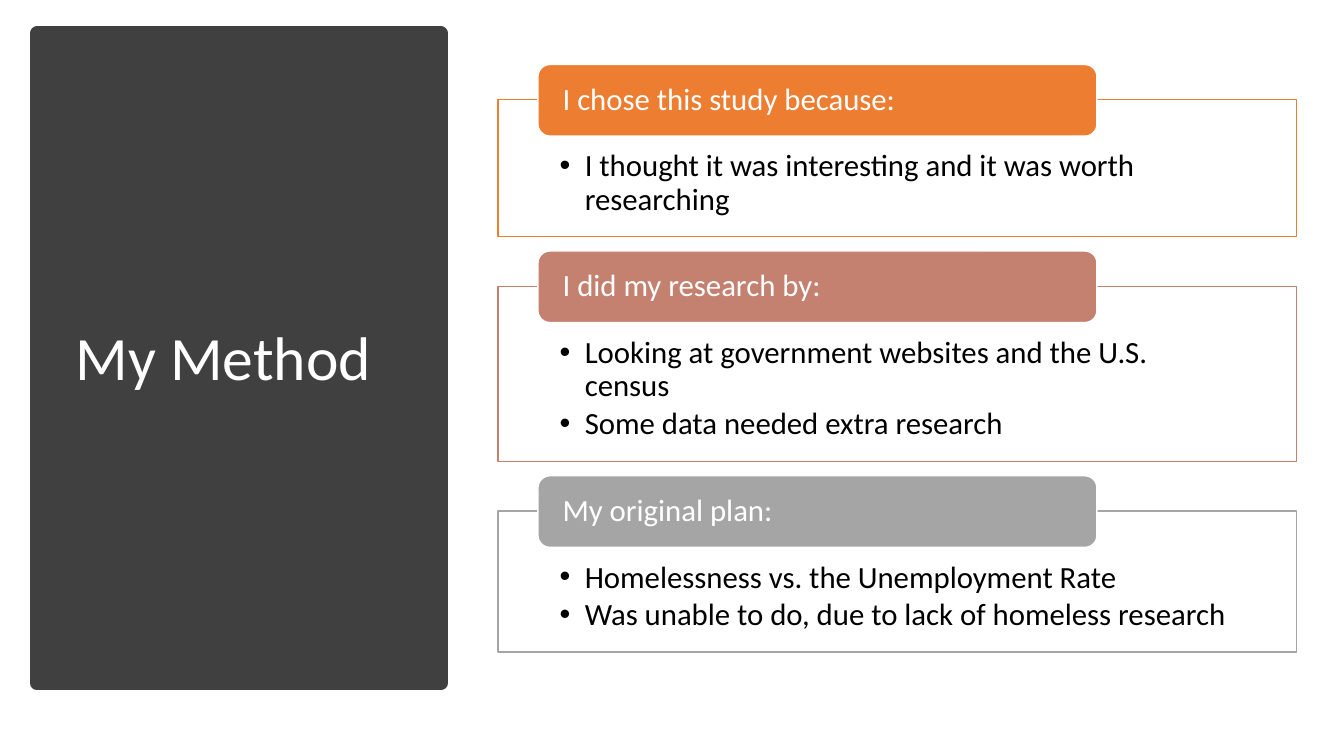
from dataclasses import dataclass

from lxml import etree
from pptx import Presentation
from pptx.dml.color import RGBColor
from pptx.enum.shapes import MSO_SHAPE
from pptx.enum.text import MSO_ANCHOR, MSO_AUTO_SIZE, PP_ALIGN
from pptx.oxml.ns import qn
from pptx.util import Inches, Pt

RECTANGLE = MSO_SHAPE.RECTANGLE
ROUNDED = MSO_SHAPE.ROUNDED_RECTANGLE
TOP, MIDDLE = MSO_ANCHOR.TOP, MSO_ANCHOR.MIDDLE
LEFT = PP_ALIGN.LEFT
NO_AUTOFIT = MSO_AUTO_SIZE.NONE


@dataclass(frozen=True)
class Theme:
    font: str = "Calibri"
    title_size: int = 44
    text_size: int = 22
    white: str = "FFFFFF"
    black: str = "000000"
    panel: str = "404040"
    orange: str = "ED7D31"
    rose: str = "C48170"
    gray: str = "A5A5A5"


THEME = Theme()

TITLE_ONLY = 5
SECTION_GAP = 0.14
HEADING_HEIGHT = 0.71
HEADING_OVERLAP = 0.36
SECTIONS = [
    ("I chose this study because:", THEME.orange, 1.36,
     ["I thought it was interesting and it was worth researching"]),
    ("I did my research by:", THEME.rose, 1.74,
     ["Looking at government websites and the U.S. census",
      "Some data needed extra research"]),
    ("My original plan:", THEME.gray, 1.4,
     ["Homelessness vs. the Unemployment Rate",
      "Was unable to do, due to lack of homeless research"]),
]


def apply_format(target, values):
    for name, value in values.items():
        setattr(target, name, value)


def add_box(slide, kind, box, fill, line, line_width):
    shape = slide.shapes.add_shape(kind, *(Inches(length) for length in box))
    shape.shadow.inherit = False
    shape.fill.solid()
    shape.fill.fore_color.rgb = RGBColor.from_string(fill)
    shape.line.color.rgb = RGBColor.from_string(line)
    shape.line.width = Pt(line_width)
    return shape


def set_opacity(shape, percent):
    color = shape.fill._xPr.find(qn("a:solidFill"))[0]
    etree.SubElement(color, qn("a:alpha"), val=str(percent * 1000))


def add_bullet(paragraph):
    properties = paragraph._p.get_or_add_pPr()
    properties.set("marL", str(Inches(0.25)))
    properties.set("indent", str(Inches(-0.25)))
    etree.SubElement(properties, qn("a:buFont"), typeface="Arial")
    etree.SubElement(properties, qn("a:buChar"), char="•")


def write_text(shape, lines, size, color, anchor, insets, bulleted=False, space_after=0):
    frame = shape.text_frame
    left, top, right, bottom = (Inches(inset) for inset in insets)
    apply_format(frame, {
        "text": "\n".join(lines),
        "word_wrap": True,
        "auto_size": NO_AUTOFIT,
        "vertical_anchor": anchor,
        "margin_left": left,
        "margin_top": top,
        "margin_right": right,
        "margin_bottom": bottom,
    })
    for paragraph in frame.paragraphs:
        if bulleted:
            paragraph.level = 1
            add_bullet(paragraph)
        apply_format(paragraph, {
            "alignment": LEFT,
            "line_spacing": 0.9,
            "space_after": Pt(space_after),
        })
        for run in paragraph.runs:
            apply_format(run.font, {"name": THEME.font, "size": Pt(size)})
            run.font.color.rgb = RGBColor.from_string(color)


def add_title_panel(slide, box):
    left, top, width, height = box
    panel = add_box(slide, RECTANGLE, box, THEME.panel, THEME.panel, 10)
    title = slide.shapes.title
    title.element.addprevious(panel.element)
    apply_format(title, {
        "left": Inches(left + 0.28),
        "top": Inches(top + 0.37),
        "width": Inches(width - 0.54),
        "height": Inches(height - 0.7),
    })
    write_text(title, ["My Method"], THEME.title_size, THEME.white, MIDDLE,
               (0.1, 0.05, 0.1, 0.05))


def add_section(slide, box, heading, color, points):
    left, top, width, height = box
    body_top = top + HEADING_HEIGHT - HEADING_OVERLAP
    body = add_box(slide, RECTANGLE, (left, body_top, width, height),
                   THEME.white, color, 1)
    set_opacity(body, 90)
    write_text(body, points, THEME.text_size, THEME.black, TOP,
               (0.61, 0.5, 0.61, 0.17), bulleted=True, space_after=3.3)
    tab = add_box(slide, ROUNDED,
                  (left + width * 0.05, top, width * 0.7, HEADING_HEIGHT),
                  color, THEME.white, 1)
    write_text(tab, [heading], THEME.text_size, THEME.white, MIDDLE,
               (0.21, 0, 0.21, 0))


def add_sections(slide, left, top, width):
    for heading, color, height, points in SECTIONS:
        add_section(slide, (left, top, width, height), heading, color, points)
        top += HEADING_HEIGHT - HEADING_OVERLAP + height + SECTION_GAP


def main():
    presentation = Presentation()
    presentation.slide_width = Inches(13.33)
    presentation.slide_height = Inches(7.5)
    slide = presentation.slides.add_slide(presentation.slide_layouts[TITLE_ONLY])
    add_title_panel(slide, (0.37, 0.33, 4, 6.45))
    add_sections(slide, 4.94, 0.64, 7.92)
    presentation.save("out.pptx")


if __name__ == "__main__":
    main()
